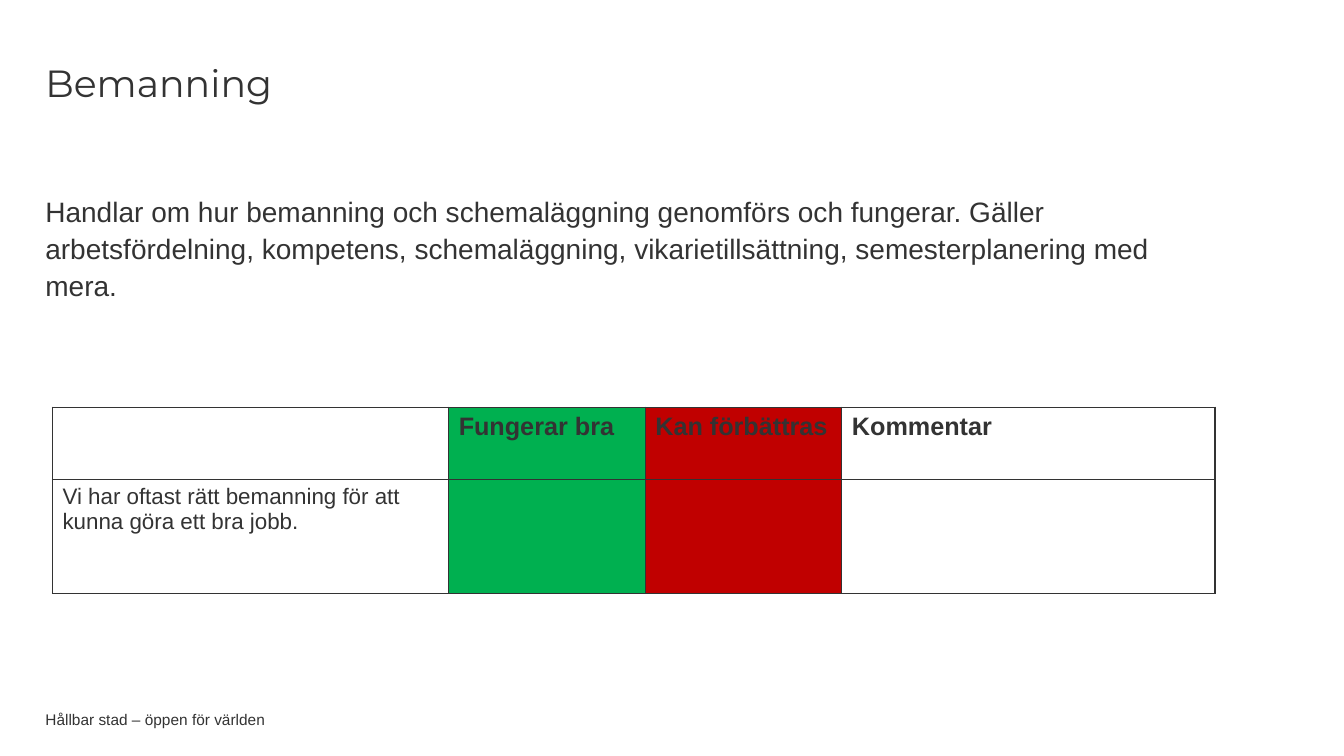
from lxml.etree import SubElement
from pptx import Presentation
from pptx.dml.color import RGBColor
from pptx.enum.text import MSO_ANCHOR
from pptx.oxml.ns import qn
from pptx.util import Inches, Pt

INK, GREEN, RED = "333333", "00B050", "C00000"
COLUMN_WIDTHS = [3.93, 1.95, 1.95, 3.7]
COLUMN_FILLS = [None, GREEN, RED, None]
ROW_HEIGHTS = [0.72, 1.13]
ROW_FONTS = [(18, True), (16, False)]
ROWS = [
    ["", "Fungerar bra", "Kan förbättras", "Kommentar"],
    ["Vi har oftast rätt bemanning för att kunna göra ett bra jobb.", "", "", ""],
]


def color(hex_string):
    return RGBColor.from_string(hex_string)


def style(font, size, name="Arial", bold=False):
    font.size, font.name, font.bold = Pt(size), name, bold
    font.color.rgb = color(INK)


def add_text(page, box, text, size, name="Arial", anchor=MSO_ANCHOR.MIDDLE, spacing=1.0):
    frame = page.shapes.add_textbox(*map(Inches, box)).text_frame
    frame.word_wrap = True
    frame.vertical_anchor = anchor
    frame.margin_left = frame.margin_right = frame.margin_top = frame.margin_bottom = 0
    frame.text = text
    para = frame.paragraphs[0]
    para.line_spacing = spacing
    style(para.runs[0].font, size, name)


def set_borders(cell):
    """Draw a thin line on all four sides; borders must precede the fill."""
    properties = cell._tc.get_or_add_tcPr()
    for side in ("a:lnL", "a:lnR", "a:lnT", "a:lnB"):
        line = SubElement(properties, qn(side), w=str(Pt(1)))
        fill = SubElement(line, qn("a:solidFill"))
        SubElement(fill, qn("a:srgbClr"), val=INK)


def add_rating_table(page, left, top):
    frame = page.shapes.add_table(
        len(ROWS), len(COLUMN_WIDTHS), Inches(left), Inches(top),
        Inches(sum(COLUMN_WIDTHS)), Inches(sum(ROW_HEIGHTS)))
    table = frame.table
    table.first_row = table.horz_banding = False
    for column, width in zip(table.columns, COLUMN_WIDTHS):
        column.width = Inches(width)
    for row, height, texts, (size, bold) in zip(table.rows, ROW_HEIGHTS, ROWS, ROW_FONTS):
        row.height = Inches(height)
        for cell, text, fill in zip(row.cells, texts, COLUMN_FILLS):
            set_borders(cell)
            if fill:
                cell.fill.solid()
                cell.fill.fore_color.rgb = color(fill)
            else:
                cell.fill.background()
            if text:
                cell.text = text
                style(cell.text_frame.paragraphs[0].runs[0].font, size, bold=bold)


def build_staffing_slide(deck):
    page = deck.slides.add_slide(deck.slide_layouts[6])
    add_text(page, (0.45, 7.06, 9.45, 0.16), "Hållbar stad – öppen för världen", 11)
    add_text(page, (0.45, 0.44, 10.03, 0.81), "Bemanning", 27, "Montserrat", spacing=0.9)
    add_text(page, (0.45, 1.9, 11.67, 1.2),
             "Handlar om hur bemanning och schemaläggning genomförs och fungerar. "
             "Gäller arbetsfördelning, kompetens, schemaläggning, vikarietillsättning, "
             "semesterplanering med mera.", 20, anchor=MSO_ANCHOR.TOP, spacing=1.1)
    add_rating_table(page, 0.52, 4.04)


def main():
    deck = Presentation()
    deck.slide_width, deck.slide_height = Inches(13.33), Inches(7.5)
    build_staffing_slide(deck)
    deck.save("out.pptx")


if __name__ == "__main__":
    main()
